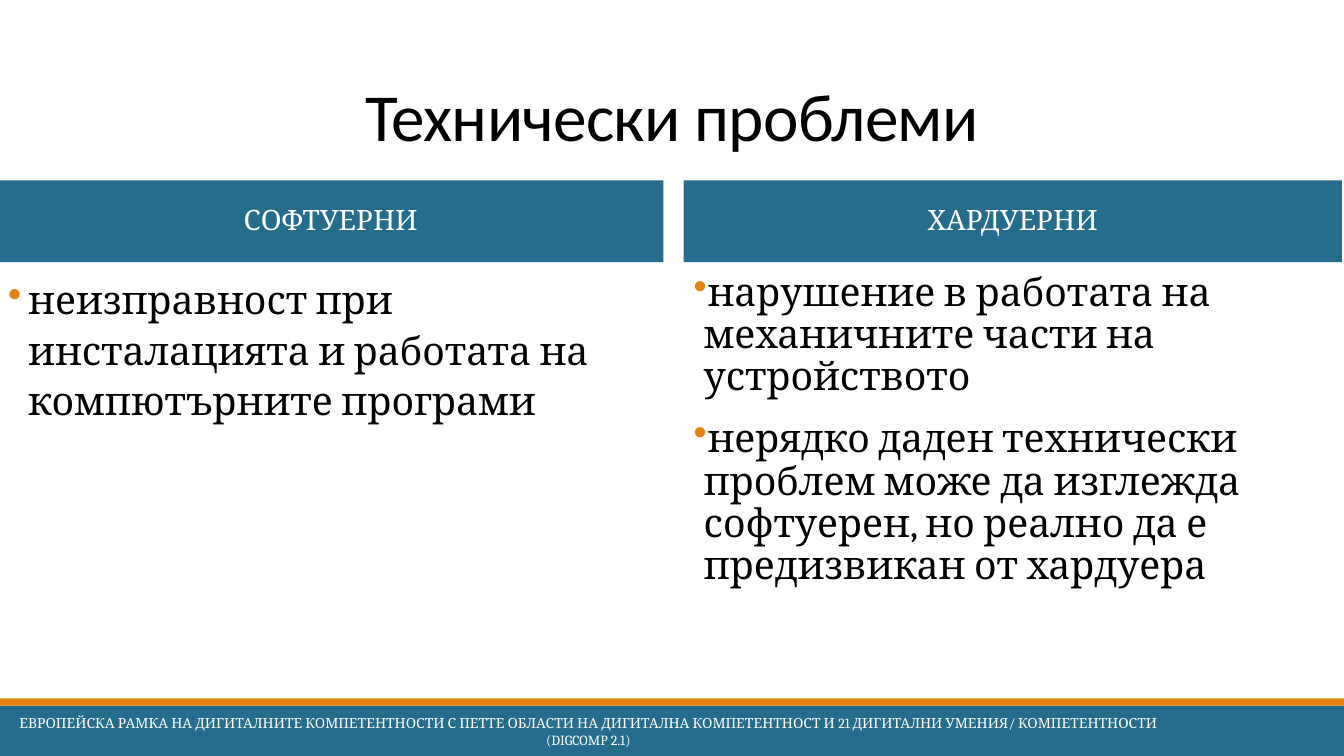
from lxml.etree import SubElement as Sub
from pptx import Presentation
from pptx.dml.color import RGBColor as RGB
from pptx.enum.shapes import MSO_SHAPE as Kind
from pptx.enum.text import MSO_ANCHOR as Anchor, PP_ALIGN as Align
from pptx.oxml.ns import qn
from pptx.util import Pt

PX = 9144
WIDE, HIGH = 1333, 750
HUES = {"blue": "256C8D", "gold": "E48312", "ink": "000000", "white": "FFFFFF"}


def emu(*nums):
    """Turn px lengths into EMU."""
    return [n * PX for n in nums]


def add_bar(slide, box, hue):
    """Add a plain filled rectangle."""
    bar = slide.shapes.add_shape(Kind.RECTANGLE, *emu(*box))
    bar.shadow.inherit = False
    bar.fill.solid()
    bar.fill.fore_color.rgb = RGB.from_string(HUES[hue])
    bar.line.fill.background()
    return bar


def add_box(slide, box):
    """Add an empty text box."""
    return slide.shapes.add_textbox(*emu(*box))


def set_text(shape, lines, size, hue, font="Cambria", anchor=Anchor.MIDDLE,
             pad=(10, 8), align=Align.CENTER, lead=1.0, gaps=(0, 0)):
    """Fill a shape with styled paragraphs and return them."""
    frame = shape.text_frame
    frame.word_wrap = True
    frame.vertical_anchor = anchor
    frame.margin_left = frame.margin_right = pad[0] * PX
    frame.margin_top = frame.margin_bottom = pad[1] * PX
    frame.text = "\n".join(lines)
    for para in frame.paragraphs:
        para.alignment = align
        para.line_spacing = lead
        para.space_before, para.space_after = map(Pt, gaps)
        para.font.size = Pt(size)
        para.font.name = font
        para.font.color.rgb = RGB.from_string(HUES[hue])
    return frame.paragraphs


def add_dot(para, left, hang):
    """Give a paragraph a gold bullet and a hanging indent."""
    props = para._p.get_or_add_pPr()
    props.set("marL", str(left * PX))
    props.set("indent", str(-hang * PX))
    color = Sub(props, qn("a:buClr"))
    Sub(color, qn("a:srgbClr")).set("val", HUES["gold"])
    Sub(props, qn("a:buChar")).set("char", "•")
    props.append(props.find(qn("a:defRPr")))


def add_title(slide, box, text):
    """Place the slide title at the bottom of its box."""
    paras = set_text(add_box(slide, box), [text], 48, "ink", "Calibri",
                     Anchor.BOTTOM, (10, 5), lead=0.85)
    for run in paras[0].runs:
        run._r.get_or_add_rPr().set("spc", "-50")


def add_side(slide, box, shift, head, lines, dent, lead, after):
    """Place a header band with a bullet list below it."""
    left, top, wide, high = box
    band = add_bar(slide, (left - shift, top, wide, 81), "blue")
    set_text(band, [head], 20, "white", lead=0.9, gaps=(12, 2))
    body = add_box(slide, (left, top + 83, wide, high - 83))
    for para in set_text(body, lines, 28, "ink", anchor=Anchor.TOP,
                         pad=(8, 8), align=Align.LEFT, lead=lead,
                         gaps=(12, after)):
        add_dot(para, *dent)


def add_foot(slide, box, text):
    """Place the footer band, its gold edge and its text."""
    left, top, wide, high = box
    add_bar(slide, (left, top + 7, wide, high - 7), "blue")
    add_bar(slide, (left, top, wide, 7), "gold")
    note = add_box(slide, (left, top + 13, wide - 166, 40))
    set_text(note, [text], 10, "white", pad=(4, 4))


def main():
    """Build and save the slide."""
    deck = Presentation()
    deck.slide_width, deck.slide_height = emu(WIDE, HIGH)
    slide = deck.slides.add_slide(deck.slide_layouts[6])
    add_foot(slide, (0, 693, WIDE, 57),
             "ЕВРОПЕЙСКА РАМКА НА ДИГИТАЛНИТЕ КОМПЕТЕНТНОСТИ С ПЕТТЕ ОБЛАСТИ "
             "НА ДИГИТАЛНА КОМПЕТЕНТНОСТ И 21 ДИГИТАЛНИ УМЕНИЯ/ "
             "КОМПЕТЕНТНОСТИ (DIGCOMP 2.1)")
    add_title(slide, (0, 0, WIDE, 159), "Технически проблеми")
    add_side(slide, (0, 179, 660, 511), 2, "СОФТУЕРНИ",
             ["неизправност при инсталацията и работата на "
              "компютърните програми"], (20, 20), 1.07, 8)
    add_side(slide, (680, 179, 653, 511), 2, "ХАРДУЕРНИ",
             ["нарушение в работата на механичните части на устройството",
              "нерядко даден технически проблем може да изглежда софтуерен, "
              "но реално да е предизвикан от хардуера"], (10, 16), 0.9, 2)
    deck.save("out.pptx")


if __name__ == "__main__":
    main()
